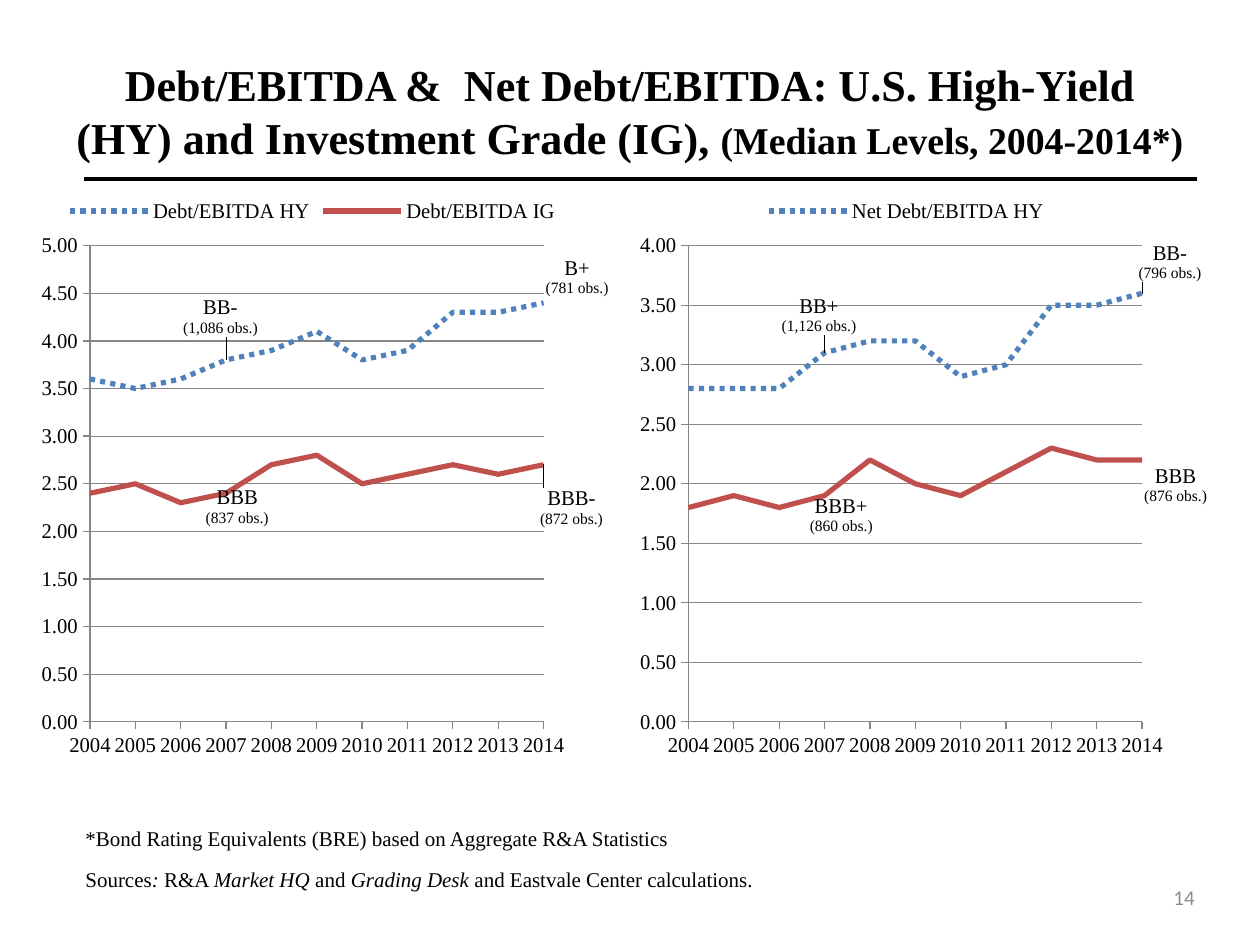
import pptx
import pptx.util
import pptx.dml.color
import pptx.chart.data
import pptx.enum.chart
import pptx.enum.dml
import pptx.enum.shapes
import pptx.enum.text
import pptx.oxml
import pptx.oxml.ns
import lxml.etree

Inches, Pt = pptx.util.Inches, pptx.util.Pt
qn = pptx.oxml.ns.qn
ENUM, DASH = pptx.enum.chart, pptx.enum.dml.MSO_LINE
ALIGN, ANCHOR = pptx.enum.text.PP_ALIGN, pptx.enum.text.MSO_ANCHOR

# Content
HUES = {"ink": "000000", "gray": "8C8C8C", "grid": "868686",
        "high": "4F81BD", "grade": "C0504D"}
SERIF = "Times New Roman"
TITLE = [("Debt/EBITDA &  Net Debt/EBITDA: U.S. High-Yield (HY) and "
          "Investment Grade (IG), ", 25.2), ("(Median Levels, 2004-2014*)", 21.6)]
YEARS = [str(year) for year in range(2004, 2015)]
WIDE, HIGH = 4.5, 4.75
# Each label: point index, rating, count, shift as parts of the chart size
CHARTS = [
    {"left": 0.33, "top": 5, "key": 0.03, "hide": False, "rows": [
        ("Debt/EBITDA HY",
         [3.6, 3.5, 3.6, 3.8, 3.9, 4.1, 3.8, 3.9, 4.3, 4.3, 4.4],
         [(3, "BB-", "(1,086 obs.)", -0.01, -0.03),
          (10, "B+", "(781 obs.)", 0.06, 0)]),
        ("Debt/EBITDA IG",
         [2.4, 2.5, 2.3, 2.4, 2.7, 2.8, 2.5, 2.6, 2.7, 2.6, 2.7],
         [(3, "BBB", "(837 obs.)", 0.02, -0.02),
          (10, "BBB-", "(872 obs.)", 0.05, 0.03)])]},
    {"left": 5.08, "top": 4, "key": 0.21, "hide": True, "rows": [
        ("Net Debt/EBITDA HY",
         [2.8, 2.8, 2.8, 3.1, 3.2, 3.2, 2.9, 3.0, 3.5, 3.5, 3.6],
         [(3, "BB+", "(1,126 obs.)", -0.01, -0.02),
          (10, "BB-", "(796 obs.)", 0.05, -0.01)]),
        ("Net Debt/EBITDA IG",
         [1.8, 1.9, 1.8, 1.9, 2.2, 2.0, 1.9, 2.1, 2.3, 2.2, 2.2],
         [(3, "BBB+", "(860 obs.)", 0.03, -0.01),
          (10, "BBB", "(876 obs.)", 0.06, 0)])]},
]
STYLES = [("high", DASH.ROUND_DOT, ENUM.XL_LABEL_POSITION.ABOVE),
          ("grade", DASH.SOLID, ENUM.XL_LABEL_POSITION.BELOW)]
# Each note: box, alignment, format, colour, runs of text and italic
NOTE = {"name": SERIF, "size": Pt(12)}
NOTES = [
    ((0.58, 6.5, 6.75, 0.3), ALIGN.LEFT, NOTE, "ink",
     [("*Bond Rating Equivalents (BRE) based on Aggregate R&A Statistics", False)]),
    ((0.58, 6.83, 6, 0.3), ALIGN.LEFT, NOTE, "ink",
     [("Sources", False), (": ", True), ("R&A ", False), ("Market HQ ", True),
      ("and ", False), ("Grading Desk ", True),
      ("and Eastvale Center calculations.", False)]),
    ((7.25, 6.92, 2.33, 0.4), ALIGN.RIGHT, {"name": "Calibri", "size": Pt(12)},
     "gray", [("14", False)]),
]
# Keeps thin lines from joining moved labels to their points
PLAIN = ('<c:extLst %s><c:ext uri="{CE6537A1-D6FC-4f65-9D91-7224C49458BB}" '
         'xmlns:c15="http://schemas.microsoft.com/office/drawing/2012/chart">'
         '<c15:showLeaderLines val="0"/></c:ext></c:extLst>')


def paint(hue):
    return pptx.dml.color.RGBColor.from_string(HUES[hue])


def build(xml):
    return pptx.oxml.parse_xml(xml % pptx.oxml.ns.nsdecls("c"))


def style(font, form, hue="ink"):
    for key, value in form.items():
        setattr(font, key, value)
    font.color.rgb = paint(hue)


def place(node, index, **parts):
    """Give a chart part a manual layout as its child at the index."""
    for old in node.findall(qn("c:layout")):
        node.remove(old)
    layout = build('<c:layout %s><c:manualLayout/></c:layout>')
    for tag, value in parts.items():
        lxml.etree.SubElement(layout[0], qn("c:" + tag)).set("val", str(value))
    node.insert(index, layout)


def draw_chart(slide, part):
    data = pptx.chart.data.CategoryChartData(number_format="#,##0.00")
    data.categories = YEARS
    for name, values, _ in part["rows"]:
        data.add_series(name, values)
    chart = slide.shapes.add_chart(
        ENUM.XL_CHART_TYPE.LINE, Inches(part["left"]), Inches(1.5),
        Inches(WIDE), Inches(HIGH), data).chart
    chart.has_title = False
    style(chart.font, NOTE)
    plot = chart.plots[0]
    plot.vary_by_categories = False
    place(chart.element.find(".//" + qn("c:plotArea")), 0, layoutTarget="inner",
          xMode="edge", yMode="edge", x=0.35 / WIDE, y=0.45 / HIGH,
          w=3.66 / WIDE, h=3.78 / HIGH)

    # Axes
    span = chart.value_axis
    marks = {"major_tick_mark": ENUM.XL_TICK_MARK.OUTSIDE,
             "minor_tick_mark": ENUM.XL_TICK_MARK.NONE}
    scale = {"minimum_scale": 0, "maximum_scale": part["top"], "major_unit": 0.5,
             "has_major_gridlines": True}
    for axis, form in ((chart.category_axis, marks), (span, {**marks, **scale})):
        for key, value in form.items():
            setattr(axis, key, value)
        style(axis.tick_labels.font, NOTE)
    for item in (chart.category_axis, span, span.major_gridlines):
        item.format.line.color.rgb = paint("grid")
        item.format.line.width = Pt(0.75)
    span.tick_labels.number_format = "#,##0.00"
    span.tick_labels.number_format_is_linked = False
    node = chart.element.find(".//" + qn("c:valAx"))
    for old in node.findall(qn("c:crossBetween")):
        node.remove(old)
    cross = lxml.etree.Element(qn("c:crossBetween"), val="midCat")
    node.find(qn("c:crosses")).addnext(cross)

    # Legend
    chart.has_legend = True
    key = chart.legend
    key.position = ENUM.XL_LEGEND_POSITION.TOP
    key.include_in_layout = False
    style(key.font, NOTE)
    root = chart.element.find(".//" + qn("c:legend"))
    place(root, 1, xMode="edge", yMode="edge", x=part["key"], y=0.01)
    if part["hide"]:
        root.insert(1, build('<c:legendEntry %s><c:idx val="1"/>'
                             '<c:delete val="1"/></c:legendEntry>'))

    # Lines and their labels
    for line, row, (hue, dash, side) in zip(plot.series, part["rows"], STYLES):
        line.smooth = False
        line.marker.style = ENUM.XL_MARKER_STYLE.NONE
        pen = line.format.line
        pen.color.rgb, pen.width, pen.dash_style = paint(hue), Pt(3), dash
        line.data_labels.show_value = False
        labels = line.data_labels._element
        for index, grade, count, right, down in row[2]:
            label = line.points[index].data_label
            frame = label.text_frame
            frame.text = grade + "\n" + count
            for para, size in zip(frame.paragraphs, (12, 9)):
                style(para.runs[0].font, {"name": SERIF, "size": Pt(size)})
            label.position = side
            tag = labels.xpath('c:dLbl[c:idx/@val="%d"]' % index)[0]
            place(tag, 1, x=right, y=down)
        labels.append(build(PLAIN))


def main():
    deck = pptx.Presentation()
    deck.slide_width, deck.slide_height = Inches(10), Inches(7.5)
    slide = deck.slides.add_slide(deck.slide_layouts[5])

    # Title and rule
    title = slide.shapes.title
    title.left, title.top, title.width, title.height = map(
        Inches, (0.5, 0.25, 9, 1.25))
    frame = title.text_frame
    frame.word_wrap, frame.vertical_anchor = True, ANCHOR.MIDDLE
    para = frame.paragraphs[0]
    para.alignment = ALIGN.CENTER
    for text, size in TITLE:
        run = para.add_run()
        run.text = text
        style(run.font, {"name": SERIF, "size": Pt(size), "bold": True})
    rule = slide.shapes.add_connector(
        pptx.enum.shapes.MSO_CONNECTOR.STRAIGHT,
        Inches(0.67), Inches(1.42), Inches(9.5), Inches(1.42))
    rule.line.color.rgb, rule.line.width = paint("ink"), Pt(2.25)
    lxml.etree.SubElement(rule._element.spPr, qn("a:effectLst"))

    for part in CHARTS:
        draw_chart(slide, part)

    # Notes and page number
    for box, align, form, hue, runs in NOTES:
        frame = slide.shapes.add_textbox(*map(Inches, box)).text_frame
        frame.word_wrap, frame.vertical_anchor = True, ANCHOR.MIDDLE
        para = frame.paragraphs[0]
        para.alignment = align
        for text, slant in runs:
            run = para.add_run()
            run.text = text
            style(run.font, {**form, "italic": slant}, hue)

    deck.save("out.pptx")


if __name__ == "__main__":
    main()
